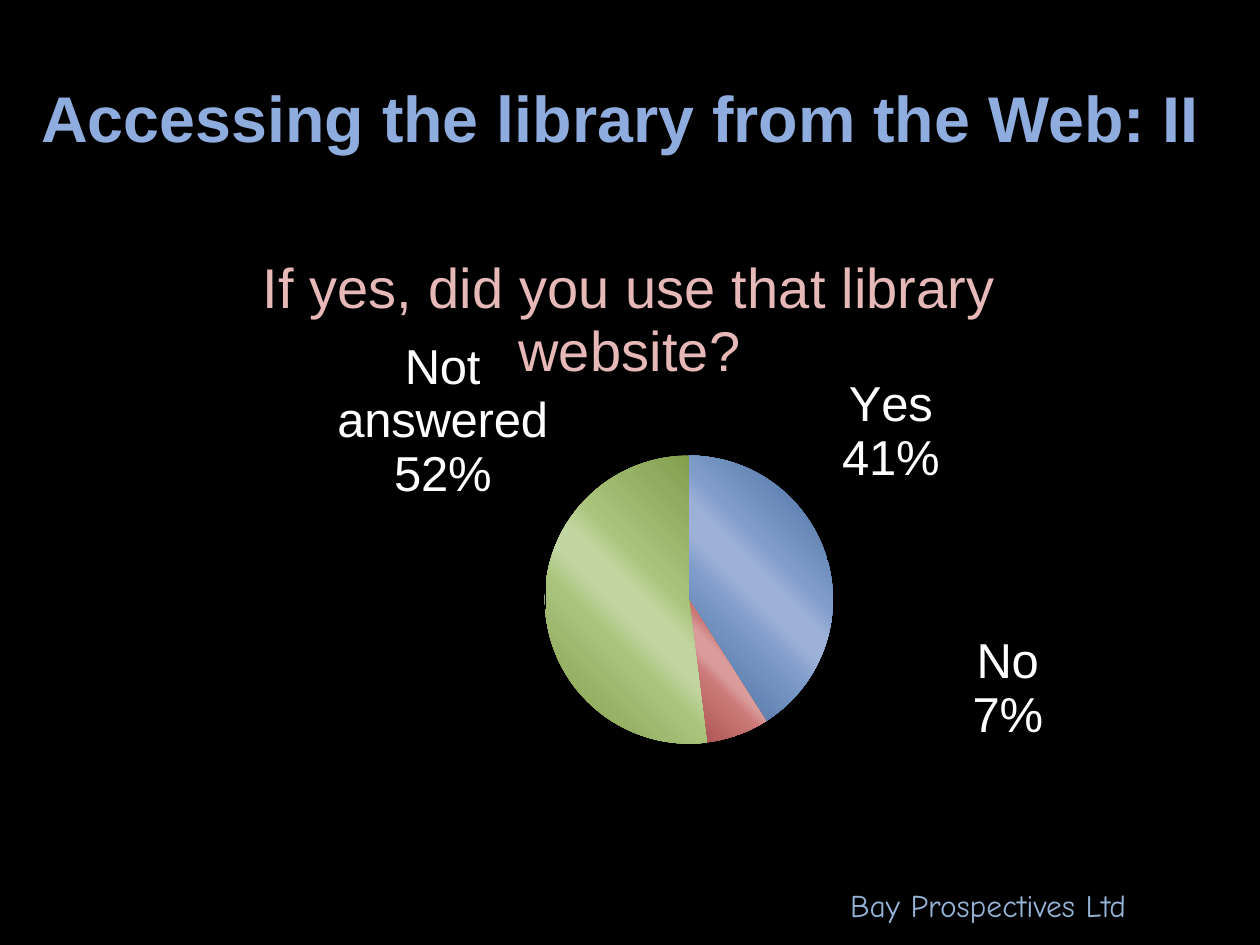
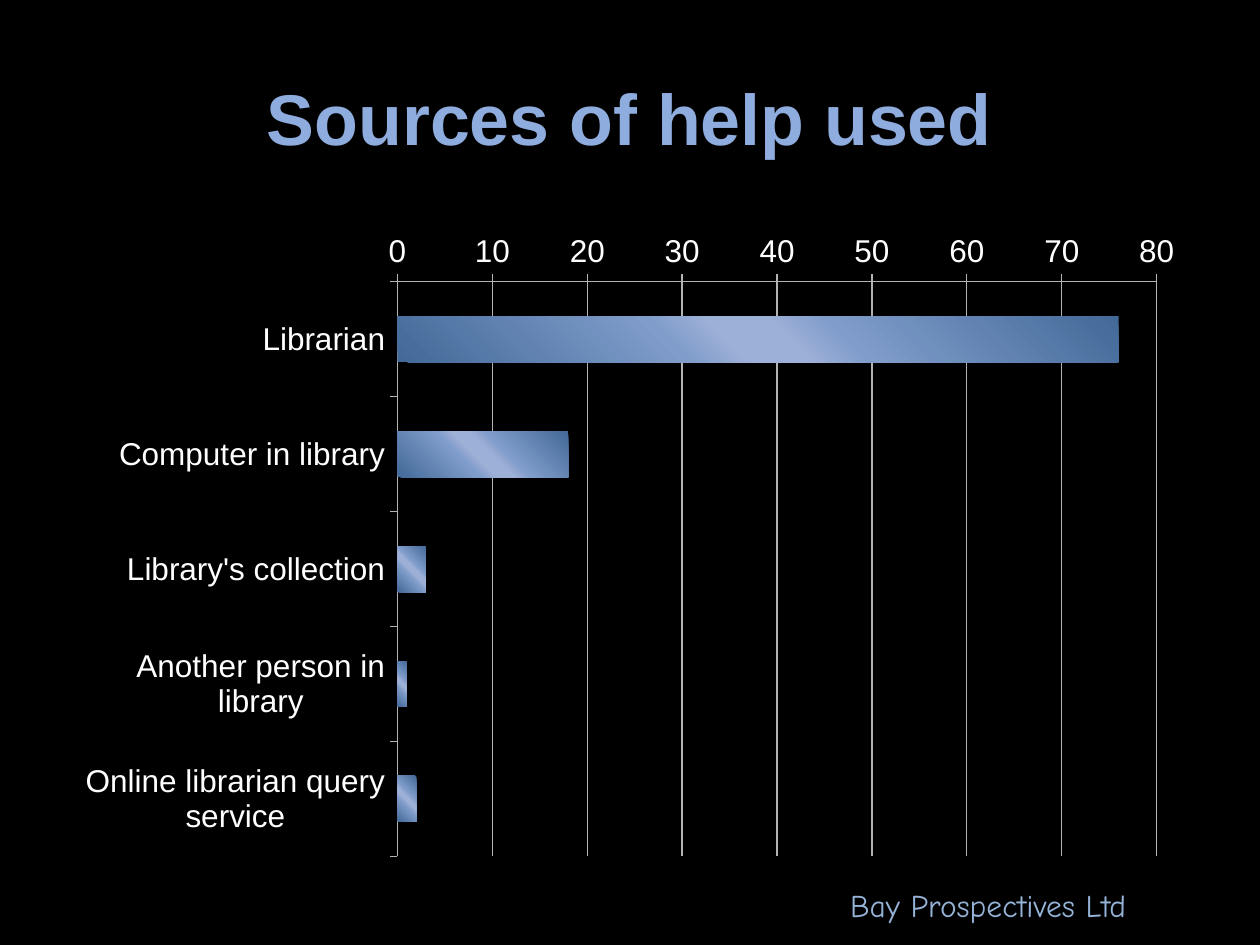
"""Builds two survey slides: a pie chart on website use and a bar chart on help sources."""
from dataclasses import dataclass

from lxml import etree
from pptx import Presentation
from pptx import util as u
from pptx.chart.data import CategoryChartData
from pptx.dml.color import RGBColor
from pptx.enum import chart as kinds, text
from pptx.oxml import parse_xml
from pptx.oxml.ns import nsdecls, qn


@dataclass(frozen=True)
class Theme:
    font: str = "Arial"
    footer_font: str = "Comic Neue"
    ground: str = "000000"
    ink: str = "FFFFFF"
    title: str = "8FACDE"
    question: str = "E6B9B8"
    footer: str = "95B3D7"
    rule: str = "B3B3B3"
    blue: tuple = ("426998", "7F9CCA", "9DB0D7")
    red: tuple = ("A64F4D", "CB7977", "D99C9B")
    green: tuple = ("7E9A48", "AAC47C", "C1D5A0")
    body_size: float = 18
    label_size: float = 28
    question_size: float = 32


THEME = Theme()
PAGE_WIDTH, PAGE_HEIGHT = 25.4, 19.05
CHART_FRAME = (1.27, 4.45, 22.86, 13.08)
FOOTER_FRAME = (16.89, 17.73, 7.59, 1.02)
FOOTER = "Bay Prospectives Ltd"

USE = {
    "title": "Accessing the library from the Web: II ",
    "title_size": 36.9,
    "title_width": 24.56,
    "series": "If yes, did you use that library website?",
    "values": {"Yes": 41, "No": 7, "Not answered": 52},
    "fills": (THEME.blue, THEME.red, THEME.green),
    "label_shifts": ((0.007, -0.11), (0.205, -0.165), (0.009, -0.289)),
    "question_place": {"x": 0.167, "y": 0.03},
    "plot_place": {"x": 0.425, "y": 0.362, "w": 0.254, "h": 0.444},
}
HELP = {
    "title": "Sources of help used",
    "title_size": 41,
    "title_width": 22.86,
    "series": "Series 1",
    "values": {
        "Librarian": 76,
        "Computer in library": 18,
        "Library's collection": 3,
        "Another person in library": 1,
        "Online librarian query service": 2,
    },
    "plot_place": {"x": 0.295, "y": 0.094, "w": 0.6695, "h": 0.886},
}


def style_font(font, size, color, name=THEME.font, bold=False):
    font.size = u.Pt(size)
    font.name = name
    font.bold = bold
    font.color.rgb = RGBColor.from_string(color)


def add_text(page, words, frame, align=text.PP_ALIGN.LEFT,
             anchor=text.MSO_ANCHOR.TOP, **font):
    box = page.shapes.add_textbox(*map(u.Cm, frame))
    box.text_frame.word_wrap = True
    box.text_frame.vertical_anchor = anchor
    para = box.text_frame.paragraphs[0]
    para.alignment = align
    span = para.add_run()
    span.text = words
    style_font(span.font, **font)


def add_page(deck, content):
    page = deck.slides.add_slide(deck.slide_layouts[6])
    page.background.fill.solid()
    page.background.fill.fore_color.rgb = RGBColor.from_string(THEME.ground)
    width = content["title_width"]
    add_text(page, content["title"], ((PAGE_WIDTH - width) / 2, 0.76, width, 3.18),
             align=text.PP_ALIGN.CENTER, anchor=text.MSO_ANCHOR.MIDDLE,
             size=content["title_size"], color=THEME.title, bold=True)
    return page


def add_footer(page):
    add_text(page, FOOTER, FOOTER_FRAME, size=THEME.body_size,
             color=THEME.footer, name=THEME.footer_font)


def layout_xml(edge=True, **place):
    modes = "".join(f'<c:{axis}Mode val="edge"/>' for axis in "xy") if edge else ""
    values = "".join(f'<c:{key} val="{value}"/>' for key, value in place.items())
    target = '<c:layoutTarget val="inner"/>' if "w" in place else ""
    return (f'<c:layout {nsdecls("c")}><c:manualLayout>{target}{modes}{values}'
            "</c:manualLayout></c:layout>")


def place_part(part, index, place):
    for layout in part.findall(qn("c:layout")):
        part.remove(layout)
    part.insert(index, parse_xml(layout_xml(**place)))


def add_chart(page, kind, content):
    data = CategoryChartData()
    data.categories = list(content["values"])
    data.add_series(content["series"], list(content["values"].values()))
    chart = page.shapes.add_chart(kind, *map(u.Cm, CHART_FRAME), data).chart
    style_font(chart.font, THEME.body_size, THEME.ink)
    chart.has_legend = False
    chart.has_title = False
    place_part(chart.plots[0]._element.getparent(), 0, content["plot_place"])
    return chart


def fill_sheen(form, shades):
    dark, middle, light = shades
    form.line.fill.background()
    form.fill.gradient()
    form.fill.gradient_angle = 45
    stops = form.fill._xPr.find(qn("a:gradFill")).find(qn("a:gsLst"))
    for stop in list(stops):
        stops.remove(stop)
    colors = (dark, middle, light, light, middle, dark)
    for percent, color in zip((0, 38, 46, 54, 62, 100), colors):
        stop = etree.SubElement(stops, qn("a:gs"), pos=str(percent * 1000))
        etree.SubElement(stop, qn("a:srgbClr"), val=color)


def shift_label(point, shift):
    label = point.data_label
    style_font(label.font, THEME.label_size, THEME.ink)
    label.position = kinds.XL_LABEL_POSITION.OUTSIDE_END
    node = label._dLbl
    for flag, shown in (("Val", 0), ("CatName", 1), ("SerName", 0), ("Percent", 1)):
        node.find(qn(f"c:show{flag}")).set("val", str(shown))
    x, y = shift
    node.insert(1, parse_xml(layout_xml(edge=False, x=x, y=y)))
    etree.SubElement(node, qn("c:separator")).text = "\n"


def build_use_page(deck):
    page = add_page(deck, USE)
    chart = add_chart(page, kinds.XL_CHART_TYPE.PIE, USE)
    chart.has_title = True
    span = chart.chart_title.text_frame.paragraphs[0].add_run()
    span.text = USE["series"]
    style_font(span.font, THEME.question_size, THEME.question)
    place_part(chart.chart_title._element, 1, USE["question_place"])

    plot = chart.plots[0]
    plot.vary_by_categories = True
    series = plot.series[0]
    labels = series.data_labels
    style_font(labels.font, THEME.label_size, THEME.ink)
    labels.show_value = False
    labels.show_category_name = True
    labels.show_percentage = True
    for index, (fill, shift) in enumerate(zip(USE["fills"], USE["label_shifts"])):
        point = series.points[index]
        fill_sheen(point.format, fill)
        shift_label(point, shift)
    add_footer(page)


def build_help_page(deck):
    page = add_page(deck, HELP)
    chart = add_chart(page, kinds.XL_CHART_TYPE.BAR_CLUSTERED, HELP)
    plot = chart.plots[0]
    plot.vary_by_categories = False
    plot.gap_width = 150
    fill_sheen(plot.series[0].format, THEME.blue)

    names, scale = chart.category_axis, chart.value_axis
    names.reverse_order = True
    scale.minimum_scale, scale.maximum_scale, scale.major_unit = 0, 80, 10
    scale.has_major_gridlines = True
    for axis in (names, scale):
        axis.major_tick_mark = kinds.XL_TICK_MARK.OUTSIDE
        style_font(axis.tick_labels.font, THEME.body_size, THEME.ink)
    for ruled in (names, scale, scale.major_gridlines):
        ruled.format.line.width = u.Pt(0.75)
        ruled.format.line.color.rgb = RGBColor.from_string(THEME.rule)
    add_footer(page)


def main():
    deck = Presentation()
    deck.slide_width, deck.slide_height = u.Cm(PAGE_WIDTH), u.Cm(PAGE_HEIGHT)
    build_use_page(deck)
    build_help_page(deck)
    deck.save("out.pptx")


if __name__ == "__main__":
    main()
